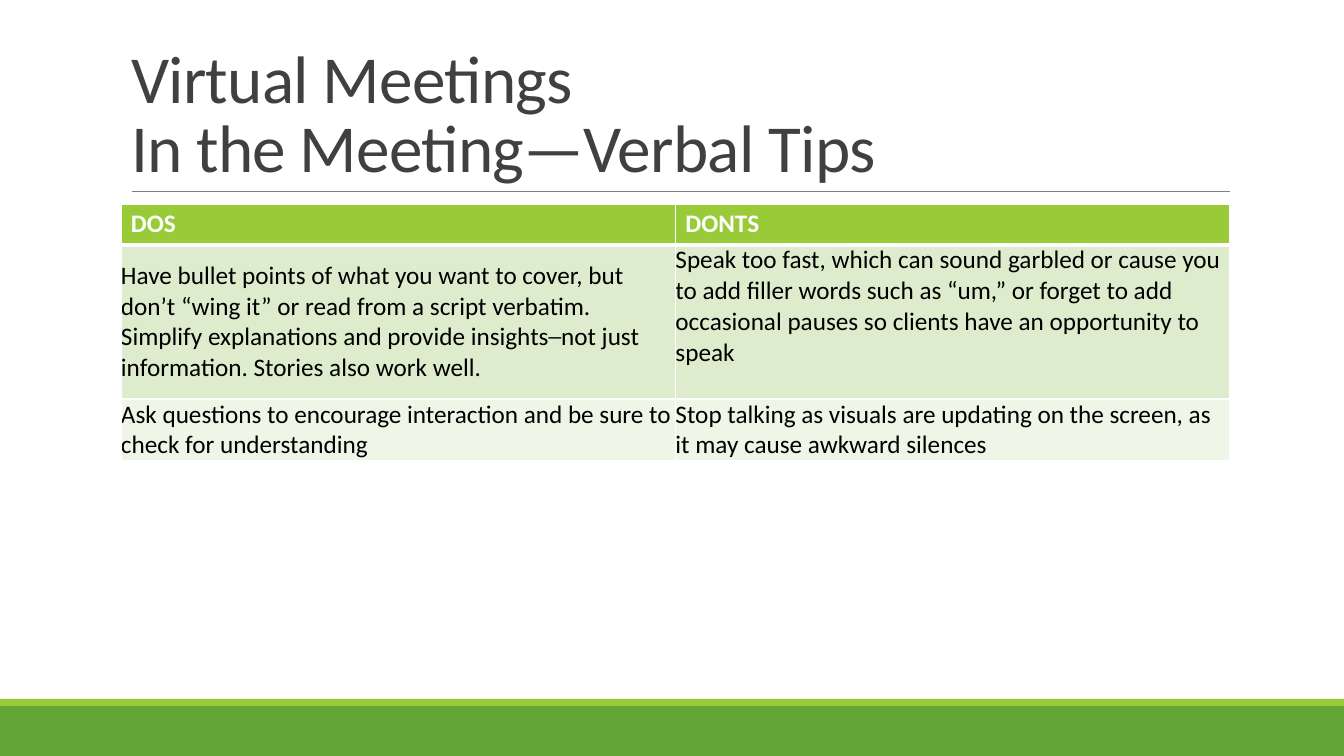
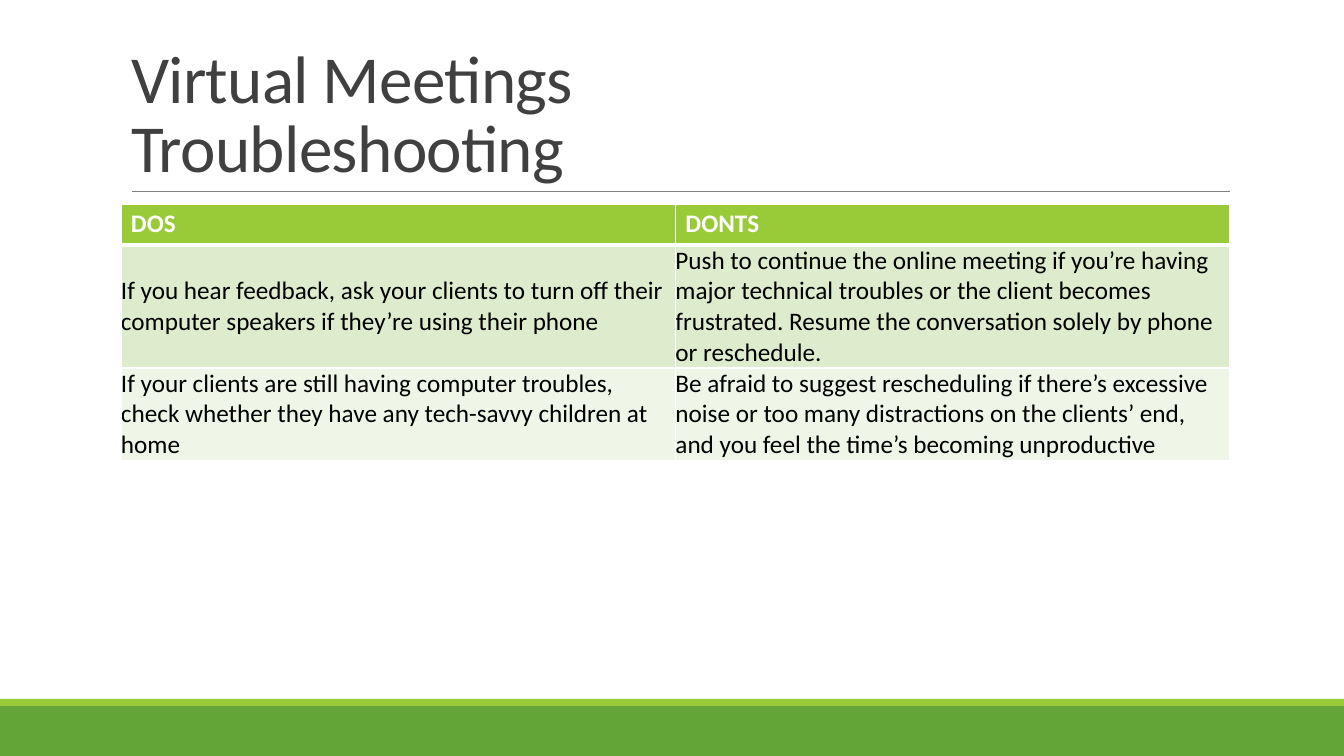
from lxml import etree
from pptx import Presentation
from pptx.dml.color import RGBColor
from pptx.enum.shapes import MSO_CONNECTOR, MSO_SHAPE
from pptx.enum.text import MSO_ANCHOR, MSO_AUTO_SIZE, PP_ALIGN
from pptx.oxml.ns import qn
from pptx.util import Emu, Pt

RECT, STRAIGHT = MSO_SHAPE.RECTANGLE, MSO_CONNECTOR.STRAIGHT
TOP, MIDDLE, BOTTOM = MSO_ANCHOR.TOP, MSO_ANCHOR.MIDDLE, MSO_ANCHOR.BOTTOM
LEFT = PP_ALIGN.LEFT
NO_FIT = MSO_AUTO_SIZE.NONE

# Shared look
FONT = "Calibri"
WHITE, BLACK, TITLE_GREY, RULE_GREY = "FFFFFF", "000000", "404040", "808080"
GREEN, LIME = "63A537", "99CB38"
ROW_FILLS = [LIME, "DEECCE", "EFF6E8"]
TITLE_FORMAT = {"name": FONT, "size": Pt(48), "bold": False}
HEADER_FORMAT = {"name": FONT, "size": Pt(18), "bold": True}
BODY_FORMAT = {"name": FONT, "size": Pt(18), "bold": False}

# Boxes in px: left, top, width, height
SLIDE_W, SLIDE_H = 1344, 756
TITLE_BOX = (121, 31, 1109, 160)
TABLE_BOX = (121, 204, 1109, 256)
FOOTER_BOX = (0, 699, SLIDE_W, 57)
ACCENT_H = 7
TITLE_INSET = 11
HEADER_INSETS = {"margin_left": 10, "margin_right": 10, "margin_top": 5, "margin_bottom": 5}
BODY_INSETS = dict.fromkeys(HEADER_INSETS, 0)

# Each body cell is (text, anchor)
SLIDES = [
    {
        "title": ["Virtual Meetings", "In the Meeting—Verbal Tips"],
        "heights": [41, 154, 61],
        "rows": [
            [("Have bullet points of what you want to cover, but don’t “wing it” or read from "
              "a script verbatim. Simplify explanations and provide insights─not just "
              "information. Stories also work well.", MIDDLE),
             ("Speak too fast, which can sound garbled or cause you to add filler words such "
              "as “um,” or forget to add occasional pauses so clients have an opportunity to "
              "speak", TOP)],
            [("Ask questions to encourage interaction and be sure to check for understanding",
              MIDDLE),
             ("Stop talking as visuals are updating on the screen, as it may cause awkward "
              "silences", MIDDLE)],
        ],
    },
    {
        "title": ["Virtual Meetings", "Troubleshooting"],
        "heights": [41, 123, 92],
        "rows": [
            [("If you hear feedback, ask your clients to turn off their computer speakers if "
              "they’re using their phone", MIDDLE),
             ("Push to continue the online meeting if you’re having major technical troubles "
              "or the client becomes frustrated. Resume the conversation solely by phone or "
              "reschedule.", MIDDLE)],
            [("If your clients are still having computer troubles, check whether they have any "
              "tech-savvy children at home", MIDDLE),
             ("Be afraid to suggest rescheduling if there’s excessive noise or too many "
              "distractions on the clients’ end, and you feel the time’s becoming "
              "unproductive", MIDDLE)],
        ],
    },
]
HEADER_ROW = [("DOS", TOP), ("DONTS", TOP)]


def px(n):
    return Emu(round(n * 914400 / 100.8))


def rgb(hex_color):
    return RGBColor.from_string(hex_color)


def add_run(p, text, font_format, color):
    r = p.add_run()
    r.text = text
    for name, value in font_format.items():
        setattr(r.font, name, value)
    r.font.color.rgb = rgb(color)
    return r


def add_band(s, box, color):
    sp = s.shapes.add_shape(RECT, *map(px, box))
    sp.shadow.inherit = False
    sp.fill.solid()
    sp.fill.fore_color.rgb = rgb(color)
    sp.line.fill.background()


def add_footer(s, box):
    left, top, width, height = box
    add_band(s, (left, top + ACCENT_H, width, height - ACCENT_H), GREEN)
    add_band(s, (left, top, width, ACCENT_H), LIME)


def add_title(s, box, lines):
    left, top, width, height = box
    # Rule under the title
    y = px(top + height)
    rule = s.shapes.add_connector(STRAIGHT, px(left + TITLE_INSET), y, px(left + width), y)
    rule.line.color.rgb = rgb(RULE_GREY)
    rule.line.width = Pt(0.5)
    etree.SubElement(rule._element.spPr, qn("a:effectLst"))

    # Title text
    sp = s.shapes.title
    sp.left, sp.top, sp.width, sp.height = map(px, box)
    tf = sp.text_frame
    tf.word_wrap, tf.auto_size, tf.vertical_anchor = True, NO_FIT, BOTTOM
    p = tf.paragraphs[0]
    p.alignment, p.line_spacing = LEFT, 0.85
    for i, line in enumerate(lines):
        if i:
            p.add_line_break()
        r = add_run(p, line, TITLE_FORMAT, TITLE_GREY)
        r.font._element.set("spc", "-50")


def add_borders(cell, widths):
    tc_pr = cell._tc.get_or_add_tcPr()
    for side, width in widths.items():
        ln = etree.SubElement(tc_pr, qn(f"a:ln{side}"), w=str(Pt(width)))
        fill = etree.SubElement(ln, qn("a:solidFill"))
        etree.SubElement(fill, qn("a:srgbClr"), val=WHITE)


def fill_cell(cell, text, anchor, row):
    header = row == 0
    # Borders come before the fill in the cell properties
    add_borders(cell, {"L": 1, "R": 1, "T": 3 if row == 1 else 1, "B": 3 if header else 1})
    cell.fill.solid()
    cell.fill.fore_color.rgb = rgb(ROW_FILLS[row])
    for name, value in (HEADER_INSETS if header else BODY_INSETS).items():
        setattr(cell, name, px(value))
    cell.vertical_anchor = anchor
    add_run(cell.text_frame.paragraphs[0], text,
            HEADER_FORMAT if header else BODY_FORMAT, WHITE if header else BLACK)


def add_tips_table(s, box, rows, heights):
    table = s.shapes.add_table(len(rows), len(rows[0]), *map(px, box)).table
    table.first_row = table.horz_banding = False
    for column in table.columns:
        column.width = px(box[2] / len(rows[0]))
    for i, (row, height) in enumerate(zip(rows, heights)):
        table.rows[i].height = px(height)
        for j, (text, anchor) in enumerate(row):
            fill_cell(table.cell(i, j), text, anchor, i)


def add_tips_slide(prs, content):
    s = prs.slides.add_slide(prs.slide_layouts[5])
    add_footer(s, FOOTER_BOX)
    add_title(s, TITLE_BOX, content["title"])
    add_tips_table(s, TABLE_BOX, [HEADER_ROW] + content["rows"], content["heights"])


def main():
    prs = Presentation()
    prs.slide_width, prs.slide_height = px(SLIDE_W), px(SLIDE_H)
    for content in SLIDES:
        add_tips_slide(prs, content)
    prs.save("out.pptx")


if __name__ == "__main__":
    main()
